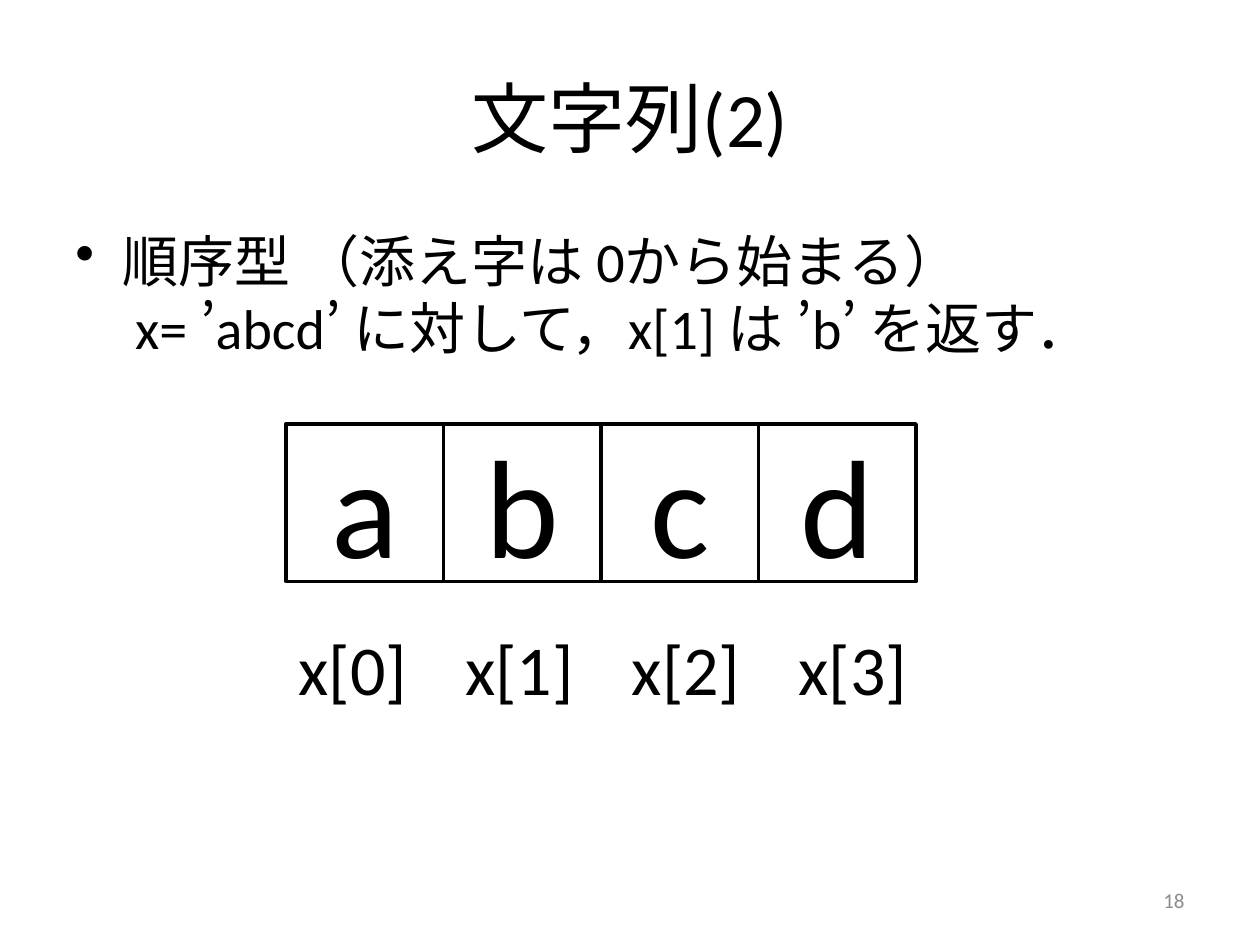
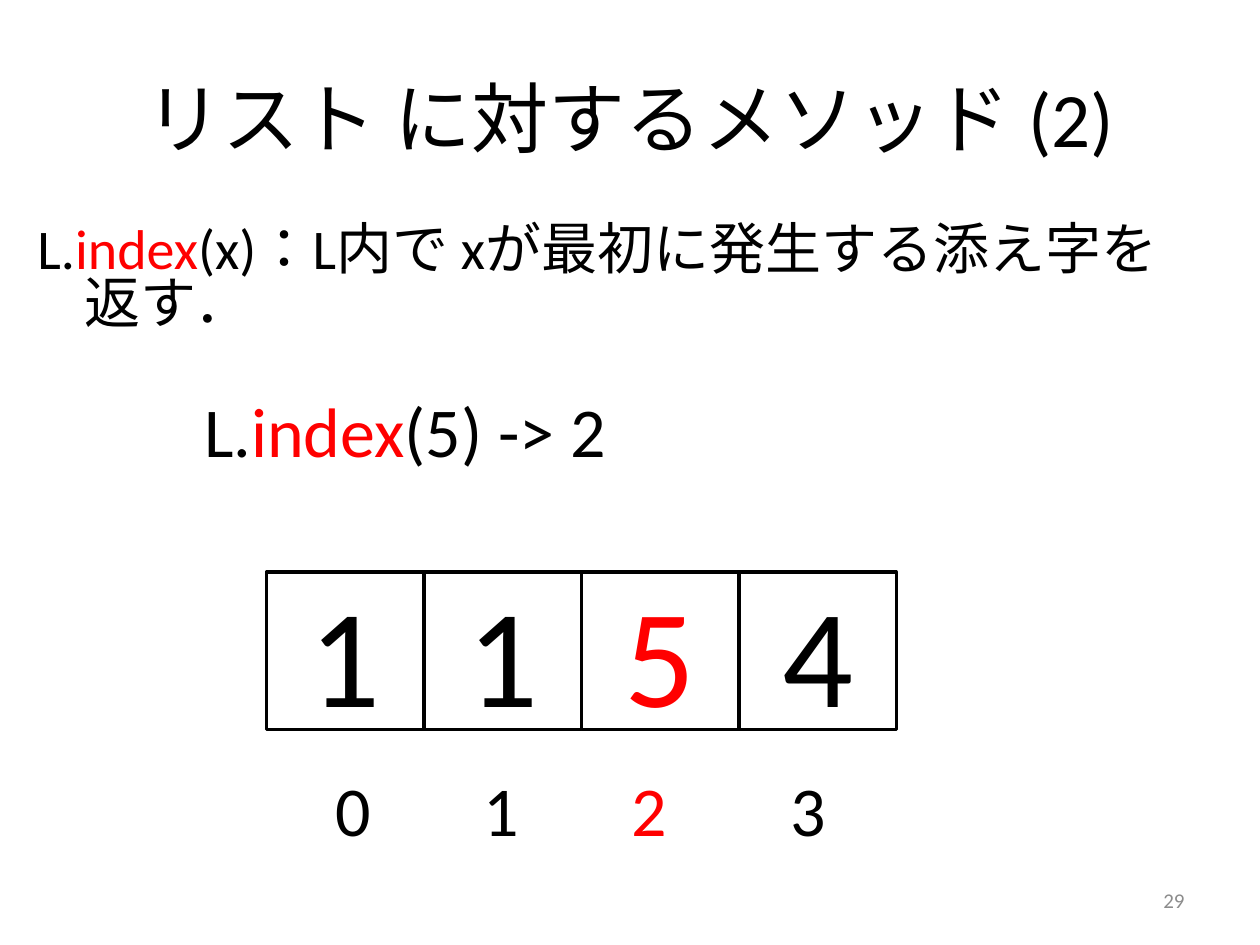
"""Build two slides on Python string indexing and the list index method."""
import pptx
import pptx.dml.color
import pptx.enum.lang
import pptx.enum.shapes
import pptx.enum.text
import pptx.util

EMU_PER_PX = 9525
FONT = "Calibri"
COLORS = {"ink": "000000", "paper": "FFFFFF", "accent": "FF0000", "muted": "8C8C8C"}
CELL_SIDE = 120
ALIGN = pptx.enum.text.PP_ALIGN
ANCHOR = pptx.enum.text.MSO_ANCHOR


def px(length):
    """Turn px into EMU."""
    return pptx.util.Emu(length * EMU_PER_PX)


def rgb(color):
    """Look up a named colour."""
    return pptx.dml.color.RGBColor.from_string(COLORS[color])


def add_run(paragraph, text, size, color="ink"):
    """Append one formatted run."""
    run = paragraph.add_run()
    run.text = text
    run.font.name = FONT
    run.font.size = pptx.util.Pt(size)
    run.font.color.rgb = rgb(color)
    run.font.language_id = pptx.enum.lang.MSO_LANGUAGE_ID.JAPANESE


def indent(paragraph, margin, first_line, bullet=None):
    """Set the left margin, first-line indent and optional bullet."""
    properties = paragraph._p.get_or_add_pPr()
    properties.set("marL", str(px(margin)))
    properties.set("indent", str(px(first_line)))
    if bullet:
        mark = properties.makeelement(pptx.oxml.ns.qn("a:buChar"), {"char": bullet})
        properties.append(mark)


def add_text_frame(slide, left, top, width, height, wrap=True):
    """Add a text box and return its frame."""
    frame = slide.shapes.add_textbox(px(left), px(top), px(width), px(height)).text_frame
    frame.word_wrap = wrap
    return frame


def add_titled_slide(deck, title, number):
    """Add a slide with the shared title style and page number."""
    slide = deck.slides.add_slide(deck.slide_layouts[5])
    heading = slide.shapes.title
    heading.left, heading.top, heading.width, heading.height = map(px, (48, 29, 864, 120))
    heading.text_frame.vertical_anchor = ANCHOR.MIDDLE
    heading_line = heading.text_frame.paragraphs[0]
    heading_line.alignment = ALIGN.CENTER
    add_run(heading_line, title, 44)

    footer = add_text_frame(slide, 688, 667, 224, 38)
    footer.vertical_anchor = ANCHOR.MIDDLE
    footer.paragraphs[0].alignment = ALIGN.RIGHT
    add_run(footer.paragraphs[0], number, 12, "muted")
    return slide


def add_cells(slide, left, top, values, highlight=None):
    """Draw a row of adjoining square cells."""
    for index, value in enumerate(values):
        cell = slide.shapes.add_shape(
            pptx.enum.shapes.MSO_SHAPE.RECTANGLE,
            px(left + index * CELL_SIDE), px(top), px(CELL_SIDE), px(CELL_SIDE))
        cell.shadow.inherit = False
        cell.fill.solid()
        cell.fill.fore_color.rgb = rgb("paper")
        cell.line.color.rgb = rgb("ink")
        cell.line.width = pptx.util.Pt(2)
        cell.text_frame.vertical_anchor = ANCHOR.MIDDLE
        line = cell.text_frame.paragraphs[0]
        line.alignment = ALIGN.CENTER
        add_run(line, value, 80, "accent" if index == highlight else "ink")


def add_index_labels(slide, lefts, top, width, labels, highlight=None):
    """Write the index under each cell."""
    for index, (left, label) in enumerate(zip(lefts, labels)):
        frame = add_text_frame(slide, left, top, width, 74, wrap=False)
        frame.auto_size = pptx.enum.text.MSO_AUTO_SIZE.SHAPE_TO_FIT_TEXT
        add_run(frame.paragraphs[0], label, 40, "accent" if index == highlight else "ink")


def add_method_call(paragraph, rest, size):
    """Write L.index with the method name highlighted."""
    add_run(paragraph, "L.", size)
    add_run(paragraph, "index", size, "accent")
    add_run(paragraph, rest, size)


def build_string_slide(deck):
    """Show how a string is indexed."""
    slide = add_titled_slide(deck, "文字列(2)", "18")
    sequence = add_text_frame(slide, 48, 168, 864, 475).paragraphs[0]
    sequence.space_before = pptx.util.Pt(6.4)
    indent(sequence, 36, -36, "•")
    add_run(sequence, "順序型 （添え字は 0から始まる）", 32)
    sequence.add_line_break()
    add_run(sequence, " x= ’abcd’ に対して，x[1] は ’b’ を返す．", 32)
    add_cells(slide, 218, 323, "abcd")
    add_index_labels(slide, range(218, 601, 127), 472, 103,
                     [f"x[{index}]" for index in range(4)])


def build_list_slide(deck):
    """Show what the index method of a list returns."""
    slide = add_titled_slide(deck, "リスト に対するメソッド (2)", "29")
    body = add_text_frame(slide, 19, 168, 915, 192)
    definition, example = body.paragraphs[0], body.add_paragraph()
    for paragraph, gap in ((definition, 6.4), (example, 40)):
        paragraph.line_spacing = 0.8
        paragraph.space_before = pptx.util.Pt(gap)
    indent(definition, 36, -36)
    add_method_call(definition, "(x)：L内で xが最初に発生する添え字を返す．", 32)
    indent(example, 127, 0)
    add_method_call(example, "(5) -> 2", 40)
    add_cells(slide, 203, 436, "1154", highlight=2)
    add_index_labels(slide, (246, 359, 472, 593), 579, 47, "0123", highlight=2)


def main():
    """Build and save the deck."""
    deck = pptx.Presentation()
    deck.slide_width, deck.slide_height = px(960), px(720)
    build_string_slide(deck)
    build_list_slide(deck)
    deck.save("out.pptx")


if __name__ == "__main__":
    main()
